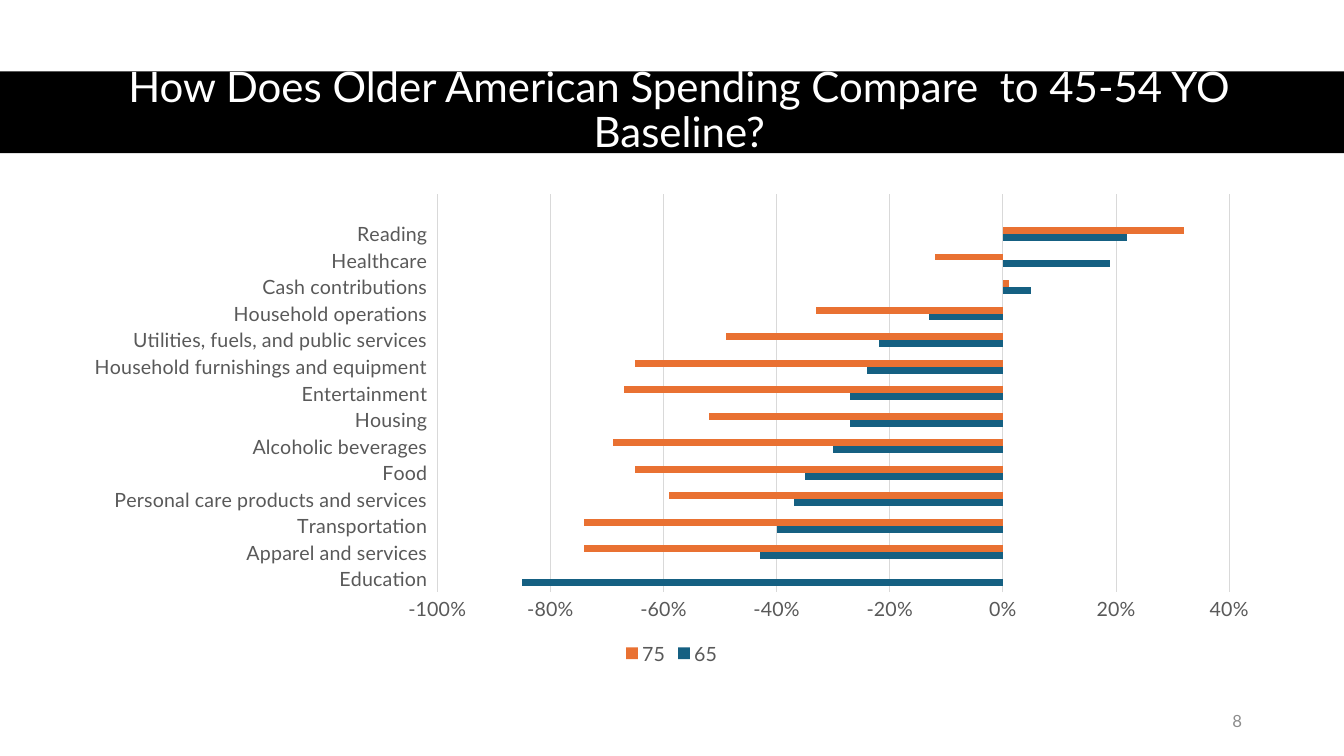
from pptx import Presentation
from pptx.chart.data import CategoryChartData
from pptx.dml.color import RGBColor
from pptx.enum.chart import XL_CHART_TYPE, XL_LEGEND_POSITION, XL_TICK_LABEL_POSITION, XL_TICK_MARK
from pptx.enum.shapes import MSO_SHAPE
from pptx.enum.text import MSO_ANCHOR, PP_ALIGN
from pptx.util import Cm, Pt

BARS = XL_CHART_TYPE.BAR_CLUSTERED
BOTTOM = XL_LEGEND_POSITION.BOTTOM
LOW = XL_TICK_LABEL_POSITION.LOW
NO_TICK = XL_TICK_MARK.NONE
RECT = MSO_SHAPE.RECTANGLE
MIDDLE = MSO_ANCHOR.MIDDLE
CENTER, RIGHT = PP_ALIGN.CENTER, PP_ALIGN.RIGHT

FONT = "Lato"
COLORS = {"band": "000000", "title": "FFFFFF", "page": "8C8C8C", "label": "595959",
          "grid": "D9D9D9", "65": "156082", "75": "E97132"}
AXES = {
    "category_axis": {"tick_label_position": LOW, "has_major_gridlines": False},
    "value_axis": {"minimum_scale": -1, "maximum_scale": 0.4, "major_unit": 0.2,
                   "has_major_gridlines": True},
}
GROUPS = ("65", "75")
SPENDING = [
    ("Education", -0.85, None),
    ("Apparel and services", -0.43, -0.74),
    ("Transportation", -0.4, -0.74),
    ("Personal care products and services", -0.37, -0.59),
    ("Food", -0.35, -0.65),
    ("Alcoholic beverages", -0.3, -0.69),
    ("Housing", -0.27, -0.52),
    ("Entertainment", -0.27, -0.67),
    ("Household furnishings and equipment", -0.24, -0.65),
    ("Utilities, fuels, and public services", -0.22, -0.49),
    ("Household operations", -0.13, -0.33),
    ("Cash contributions", 0.05, 0.01),
    ("Healthcare", 0.19, -0.12),
    ("Reading", 0.22, 0.32),
    ("", None, None),
]


def color(name):
    return RGBColor.from_string(COLORS[name])


def style(item, values):
    for key, value in values.items():
        setattr(item, key, value)


def set_font(font, size, name):
    style(font, {"name": FONT, "size": Pt(size), "bold": False})
    font.color.rgb = color(name)


def set_line(line, name):
    line.width = Pt(0.75)
    line.color.rgb = color(name)


def add_text(slide, box, text, size, name, align, **layout):
    frame = slide.shapes.add_textbox(*map(Cm, box)).text_frame
    style(frame, {"word_wrap": True, "vertical_anchor": MIDDLE})
    para = frame.paragraphs[0]
    style(para, {"text": text, "alignment": align, **layout})
    set_font(para.runs[0].font, size, name)


def add_head(slide, box):
    """Place the full-width band and the title over it."""
    left, top, width, height = box
    band = slide.shapes.add_shape(RECT, *map(Cm, box))
    band.shadow.inherit = False
    band.fill.solid()
    band.fill.fore_color.rgb = color("band")
    band.line.fill.background()
    add_text(slide, (left + 1.55, top - 0.02, width - 2.73, height),
             "How Does Older American Spending Compare  to 45-54 YO Baseline?",
             30, "title", CENTER, line_spacing=0.9)


def add_bars(slide, box):
    data = CategoryChartData(number_format="0%")
    labels, *columns = zip(*SPENDING)
    data.categories = labels
    for group, values in zip(GROUPS, columns):
        data.add_series(group, values)
    chart = slide.shapes.add_chart(BARS, *map(Cm, box), data).chart
    style(chart, {"has_title": False, "has_legend": True})
    style(chart.legend, {"position": BOTTOM, "include_in_layout": False})
    set_font(chart.font, 10, "band")
    set_font(chart.legend.font, 14, "label")

    for key, values in AXES.items():
        axis = getattr(chart, key)
        style(axis, {"major_tick_mark": NO_TICK, "minor_tick_mark": NO_TICK, **values})
        set_font(axis.tick_labels.font, 14, "label")
    set_line(chart.category_axis.format.line, "grid")
    scale = chart.value_axis
    set_line(scale.major_gridlines.format.line, "grid")
    scale.format.line.fill.background()
    style(scale.tick_labels, {"number_format": "0%", "number_format_is_linked": False})

    plot = chart.plots[0]
    style(plot, {"gap_width": 182, "overlap": 0, "vary_by_categories": False})
    for series in plot.series:
        series.invert_if_negative = False
        series.format.fill.solid()
        series.format.fill.fore_color.rgb = color(series.name)


def main():
    deck = Presentation()
    style(deck, {"slide_width": Cm(33.87), "slide_height": Cm(19.05)})
    slide = deck.slides.add_slide(deck.slide_layouts[6])
    add_head(slide, (0, 1.8, 33.87, 2.06))
    add_bars(slide, (1.78, 4.65, 30.3, 12.22))
    add_text(slide, (23.93, 17.65, 7.62, 1.02), "8", 12, "page", RIGHT, space_after=Pt(6))
    deck.save("out.pptx")


if __name__ == "__main__":
    main()
